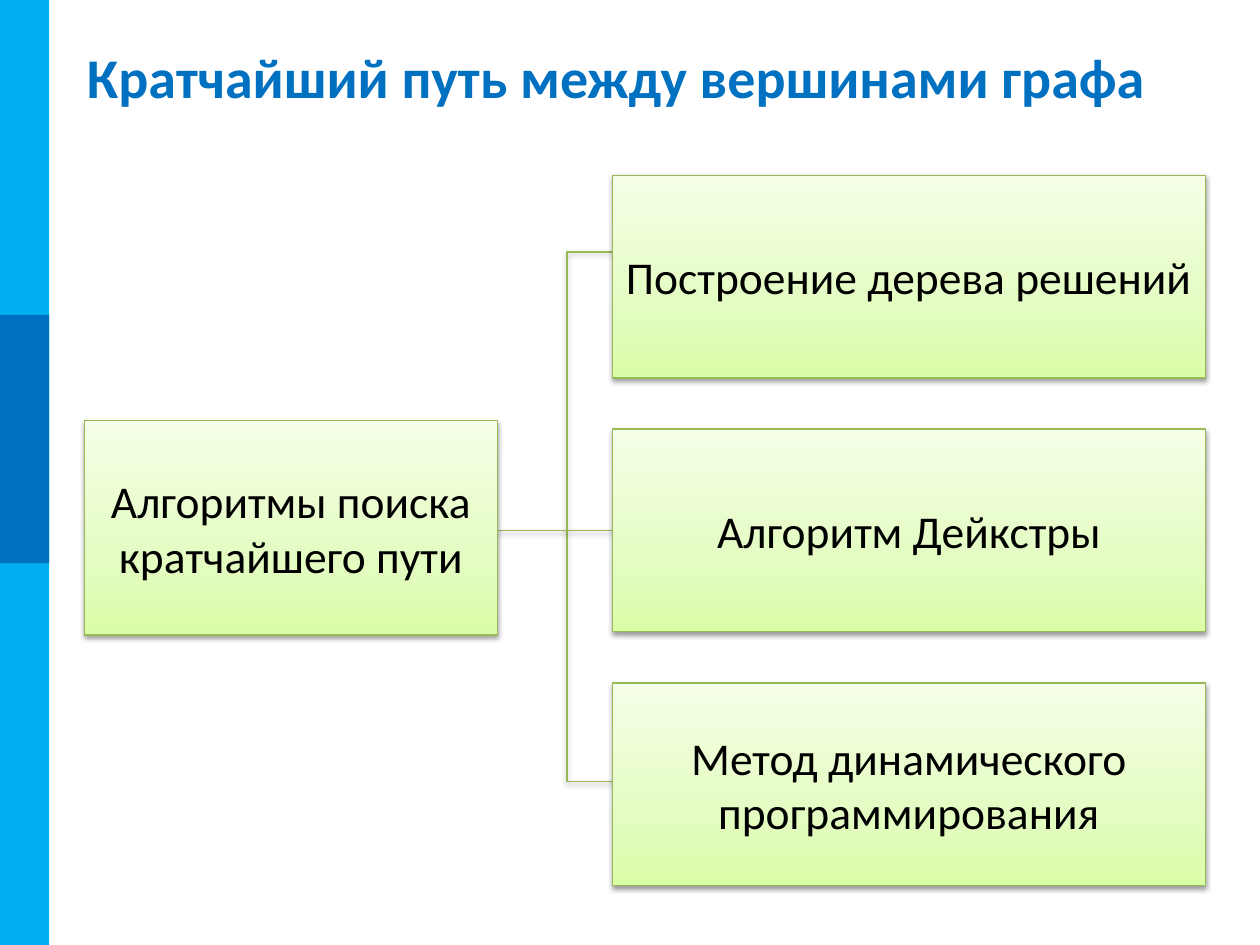
from copy import deepcopy
from dataclasses import dataclass

from lxml.etree import SubElement
from pptx import Presentation
from pptx.dml.color import RGBColor
from pptx.enum.shapes import MSO_CONNECTOR as Connector, MSO_SHAPE as Preset
from pptx.enum.text import MSO_ANCHOR as Anchor, PP_ALIGN as Align
from pptx.oxml.ns import qn
from pptx.util import Inches, Pt

COLUMNS, ROWS = 100, 75
CELL = Inches(0.1)


@dataclass(frozen=True)
class Theme:
    font: str = "Calibri"
    title_size: int = 32
    box_size: int = 26
    line_width: float = 0.75
    dark_blue: str = "0070C0"
    light_blue: str = "00B0F0"
    outline: str = "98B955"
    ink: str = "000000"
    gradient: tuple = ((0, "DAFDA7"), (0.35, "E4FCC2"), (1, "F5FFE7"))


@dataclass(frozen=True)
class Area:
    column: float
    row: float
    width: float
    height: float

    @property
    def right(self) -> float:
        return self.column + self.width

    @property
    def middle(self) -> float:
        return self.row + self.height / 2

    def lengths(self) -> tuple:
        return tuple(cells(value) for value in (self.column, self.row, self.width, self.height))


@dataclass(frozen=True)
class Node:
    text: str
    area: Area


THEME = Theme()
ROOT = Node("Алгоритмы поиска кратчайшего пути", Area(6.7, 33.4, 32.8, 17))
METHODS = ("Построение дерева решений", "Алгоритм Дейкстры", "Метод динамического программирования")
BRANCHES = [Node(text, Area(48.6, 13.9 + 20.15 * index, 47.1, 16.1)) for index, text in enumerate(METHODS)]
STRIPES = ((Area(0, 0, 3.9, ROWS), THEME.light_blue), (Area(0, 25, 3.9, 19.7), THEME.dark_blue))


def cells(value: float) -> int:
    return round(value * CELL)


def color(code: str) -> RGBColor:
    return RGBColor.from_string(code)


def add_shadow(shape) -> None:
    properties = shape._element.spPr
    effects = properties.find(qn("a:effectLst"))
    if effects is None:
        effects = SubElement(properties, qn("a:effectLst"))
    shadow = SubElement(effects, qn("a:outerShdw"), blurRad=str(Pt(3.1)), dist=str(Pt(1.6)),
                        dir="5400000", rotWithShape="0")
    tint = SubElement(shadow, qn("a:srgbClr"), val=THEME.ink)
    SubElement(tint, qn("a:alpha"), val="38000")


def style_line(shape) -> None:
    shape.line.color.rgb = color(THEME.outline)
    shape.line.width = Pt(THEME.line_width)


def fill_gradient(shape) -> None:
    shape.fill.gradient()
    shape.fill.gradient_angle = 90
    stops = shape._element.spPr.find(qn("a:gradFill")).find(qn("a:gsLst"))
    stops.append(deepcopy(stops[0]))
    for stop, (position, code) in zip(shape.fill.gradient_stops, THEME.gradient):
        stop.position = position
        stop.color.rgb = color(code)


def style_text(frame, size: int, code: str, bold: bool, align: Align) -> None:
    frame.word_wrap = True
    frame.vertical_anchor = Anchor.MIDDLE
    para = frame.paragraphs[0]
    para.alignment = align
    for span in para.runs:
        span.font.name = THEME.font
        span.font.size = Pt(size)
        span.font.bold = bold
        span.font.color.rgb = color(code)


def draw_stripe(page, area: Area, code: str) -> None:
    stripe = page.shapes.add_shape(Preset.RECTANGLE, *area.lengths())
    stripe.shadow.inherit = False
    stripe.fill.solid()
    stripe.fill.fore_color.rgb = color(code)
    stripe.line.fill.background()


def draw_title(page, text: str) -> None:
    title = page.shapes.title
    title.left, title.top, title.width, title.height = Area(5.9, 3, 90.6, 6.1).lengths()
    title.text_frame.text = text
    style_text(title.text_frame, THEME.title_size, THEME.dark_blue, True, Align.LEFT)


def draw_links(page) -> None:
    first, center, last = (node.area for node in BRANCHES)
    spine, upper, lower = 44.6, 20.1, 62.5
    builder = page.shapes.build_freeform(last.column, lower, scale=CELL)
    builder.add_line_segments([(spine, lower), (spine, upper), (first.column, upper)], close=False)
    bracket = builder.convert_to_shape()
    bracket.fill.background()
    bracket.shadow.inherit = False
    trunk_row = cells(ROOT.area.middle + 0.2)
    trunk = page.shapes.add_connector(Connector.STRAIGHT, cells(ROOT.area.right), trunk_row,
                                      cells(center.column), trunk_row)
    for link in (bracket, trunk):
        style_line(link)
        add_shadow(link)


def draw_node(page, node: Node) -> None:
    box = page.shapes.add_shape(Preset.RECTANGLE, *node.area.lengths())
    box.shadow.inherit = False
    fill_gradient(box)
    style_line(box)
    add_shadow(box)
    frame = box.text_frame
    frame.text = node.text
    frame.margin_left = frame.margin_right = Inches(0.05)
    style_text(frame, THEME.box_size, THEME.ink, False, Align.CENTER)


def main() -> None:
    deck = Presentation()
    deck.slide_width, deck.slide_height = COLUMNS * CELL, ROWS * CELL
    page = deck.slides.add_slide(deck.slide_layouts.get_by_name("Title Only"))
    for area, code in STRIPES:
        draw_stripe(page, area, code)
    draw_title(page, "Кратчайший путь между вершинами графа")
    draw_links(page)
    for node in (ROOT, *BRANCHES):
        draw_node(page, node)
    deck.save("out.pptx")


if __name__ == "__main__":
    main()
